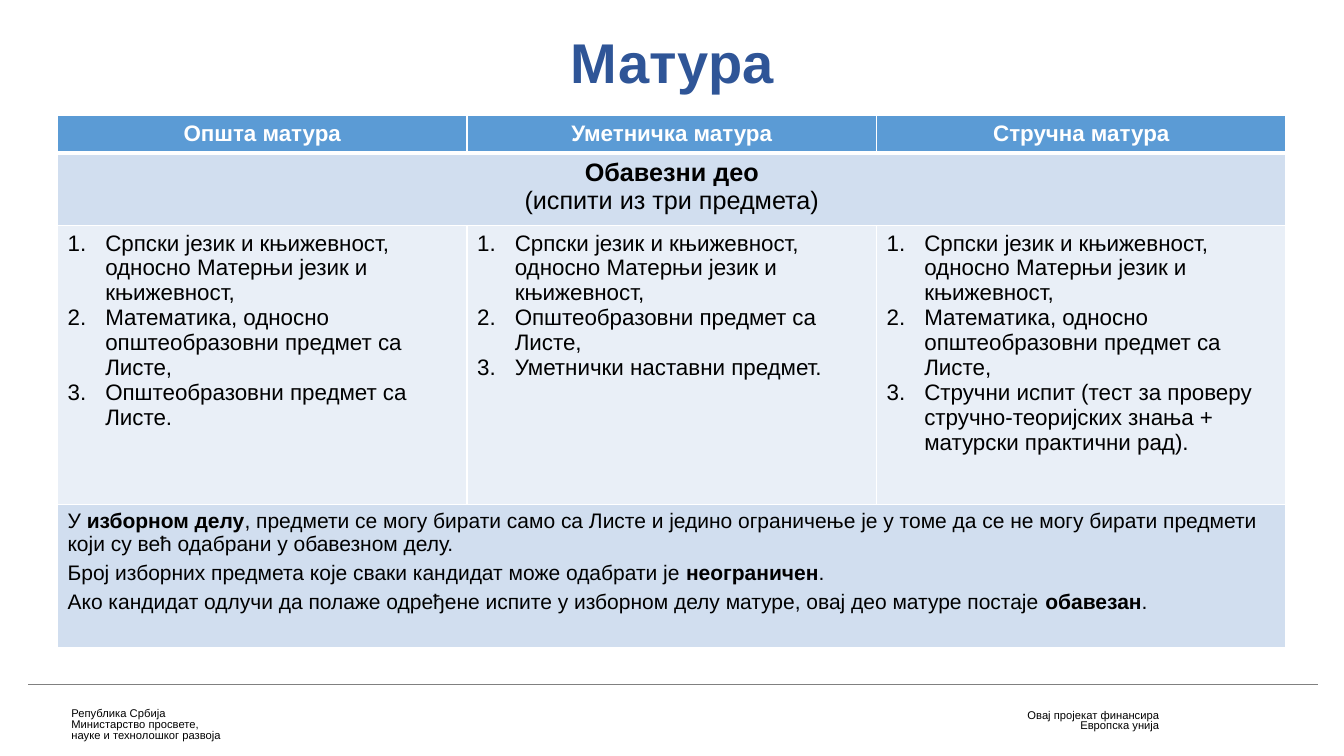
from lxml.etree import SubElement as Sub
from pptx import Presentation
from pptx.dml.color import RGBColor as RGB
from pptx.enum.shapes import MSO_CONNECTOR as CONN
from pptx.enum.text import MSO_ANCHOR as ANCHOR, PP_ALIGN as ALIGN
from pptx.oxml.ns import qn
from pptx.util import Cm, Pt

NAVY = RGB(0x2F, 0x55, 0x97)
BLUE = RGB(0x5B, 0x9B, 0xD5)
MID = RGB(0xD1, 0xDE, 0xEF)
PALE = RGB(0xE9, 0xEF, 0xF7)
GREY = RGB(0x80, 0x80, 0x80)
BLACK = RGB(0, 0, 0)
WHITE = RGB(0xFF, 0xFF, 0xFF)


def write(frame, lines, size, color=BLACK, align=ALIGN.LEFT, pitch=None,
          after=0, number=False):
    """Fill a text frame; words between asterisks are bold."""
    for i, line in enumerate(lines):
        para = frame.paragraphs[0] if i == 0 else frame.add_paragraph()
        para.alignment = align
        para.space_after = Pt(after)
        if pitch:
            para.line_spacing = pitch
        if number:
            props = para._p.get_or_add_pPr()
            props.set("marL", str(Cm(0.95)))
            props.set("indent", str(Cm(-0.95)))
            Sub(props, qn("a:buFont"), typeface="Arial")
            Sub(props, qn("a:buAutoNum"), type="arabicPeriod")
        for j, part in enumerate(line.split("*")):
            if part.startswith("\n"):
                para.add_line_break()
            if part:
                run = para.add_run()
                run.text = part.lstrip("\n")
                font = run.font
                font.name, font.size = "Arial", Pt(size)
                font.bold = j % 2 == 1
                font.color.rgb = color


def edge(cell, side, width):
    """Draw one white side of a cell."""
    line = Sub(cell._tc.get_or_add_tcPr(), qn("a:ln" + side),
               w=str(Pt(width)))
    fill = Sub(line, qn("a:solidFill"))
    Sub(fill, qn("a:srgbClr"), val=str(WHITE))


deck = Presentation()
deck.slide_width, deck.slide_height = Cm(33.87), Cm(19.05)
slide = deck.slides.add_slide(deck.slide_layouts[6])
shapes = slide.shapes

# Footer
notes = [
    (25.63, 17.78, 3.84, 0.79, ALIGN.RIGHT,
     ["Овај пројекат финансира", "Европска унија"]),
    (1.55, 17.75, 4.29, 1.07, ALIGN.LEFT,
     ["Република Србија", "Министарство просвете,",
      "науке и технолошког развоја"]),
]
for x, y, w, h, align, lines in notes:
    box = shapes.add_textbox(Cm(x), Cm(y), Cm(w), Cm(h))
    box.text_frame.word_wrap = False
    write(box.text_frame, lines, 8, align=align, pitch=0.8)

rule = shapes.add_connector(CONN.STRAIGHT, Cm(0.71), Cm(17.25),
                            Cm(33.22), Cm(17.25))
rule.line.color.rgb = GREY
rule.line.width = Pt(1)
Sub(rule._element.spPr, qn("a:effectLst"))

# Title
title = shapes.add_textbox(Cm(2.34), Cm(-0.18), Cm(29.21), Cm(3.68))
title.text_frame.word_wrap = True
title.text_frame.vertical_anchor = ANCHOR.MIDDLE
write(title.text_frame, ["*Матура*"], 40, NAVY, ALIGN.CENTER, 0.9)

# Table grid
highs = [0.94, 1.83, 7.02, 3.6]
table = shapes.add_table(4, 3, Cm(1.45), Cm(2.92), Cm(30.96),
                         Cm(sum(highs))).table
for col in table.columns:
    col.width = Cm(10.32)
for r, (high, tint) in enumerate(zip(highs, [BLUE, MID, PALE, MID])):
    table.rows[r].height = Cm(high)
    for cell in table.rows[r].cells:
        edge(cell, "L", 0.96)
        edge(cell, "R", 0.96)
        edge(cell, "T", 3 if r == 1 else 0.96)
        edge(cell, "B", 3 if r == 0 else 0.96)
        cell.fill.solid()
        cell.fill.fore_color.rgb = tint
for r in (1, 3):
    table.cell(r, 0).merge(table.cell(r, 2))

# Exam types and their subjects
native = "Српски језик и књижевност, односно Матерњи језик и књижевност,"
maths = "Математика, односно општеобразовни предмет са Листе,"
exams = [
    ("Општа", [native, maths, "Општеобразовни предмет са Листе."]),
    ("Уметничка", [native, "Општеобразовни предмет са Листе,",
                   "Уметнички наставни предмет."]),
    ("Стручна", [native, maths,
                 "Стручни испит (тест за проверу стручно-теоријских знања "
                 "+ матурски практични рад)."]),
]
for c, (kind, items) in enumerate(exams):
    write(table.cell(0, c).text_frame, [f"*{kind} матура*"], 16, WHITE,
          ALIGN.CENTER)
    write(table.cell(2, c).text_frame, items, 16, number=True)

# Rows across all columns
write(table.cell(1, 0).text_frame,
      ["*Обавезни део*\n(испити из три предмета)"], 18, align=ALIGN.CENTER)
write(table.cell(3, 0).text_frame, [
    "У *изборном делу*, предмети се могу бирати само са Листе и једино "
    "ограничење је у томе да се не могу бирати предмети који су већ "
    "одабрани у обавезном делу.",
    "Број изборних предмета које сваки кандидат може одабрати је "
    "*неограничен*.",
    "Ако кандидат одлучи да полаже одређене испите у изборном делу матуре, "
    "овај део матуре постаје *обавезан*.",
], 15, after=4)

deck.save("out.pptx")
